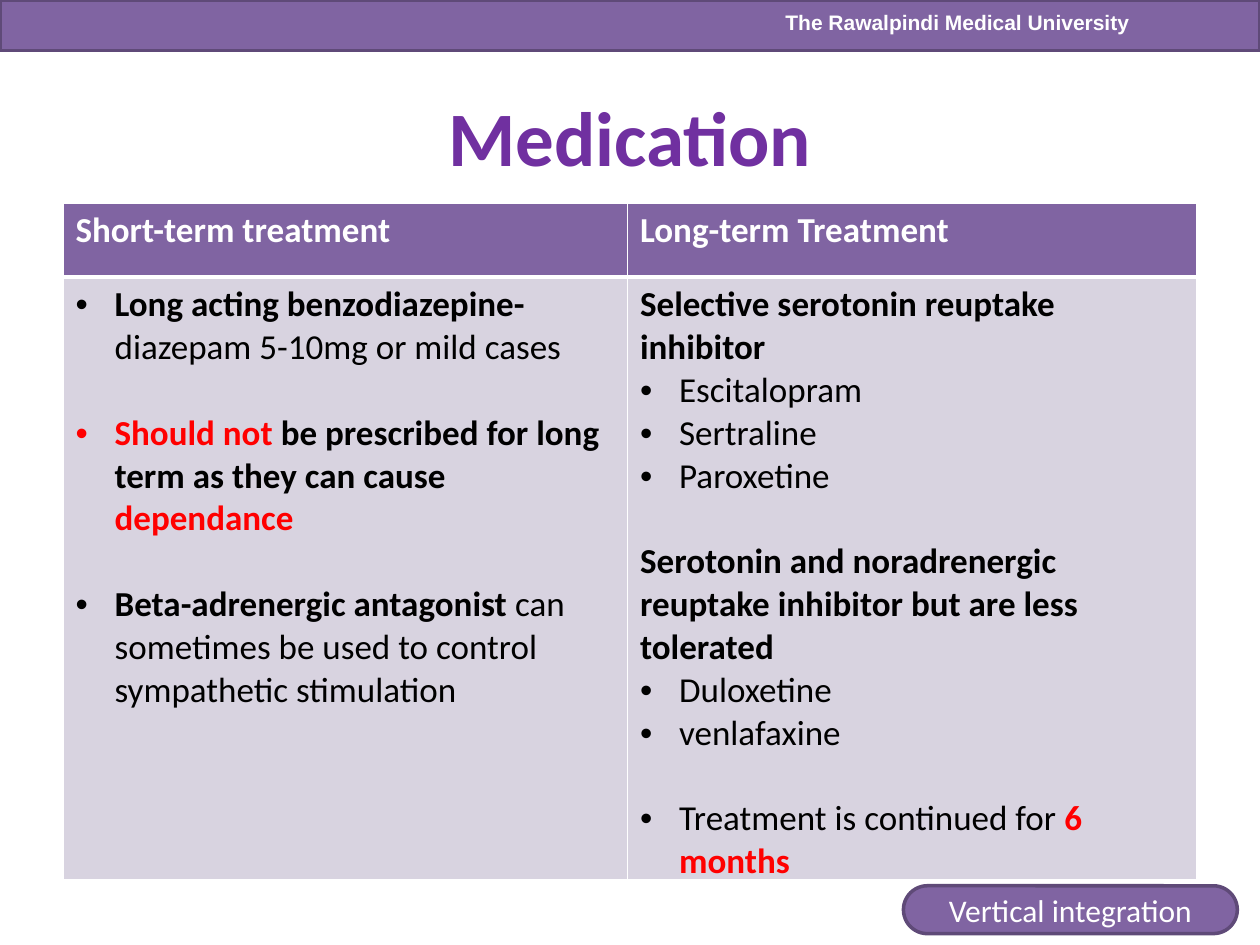
import dataclasses
import typing

import lxml.etree
import pptx
import pptx.dml.color
import pptx.enum.shapes
import pptx.enum.text
import pptx.oxml.ns
import pptx.util

Inches = pptx.util.Inches
Pt = pptx.util.Pt
RGBColor = pptx.dml.color.RGBColor
Align = pptx.enum.text.PP_ALIGN
Anchor = pptx.enum.text.MSO_ANCHOR
Shape = pptx.enum.shapes.MSO_SHAPE
qn = pptx.oxml.ns.qn

PURPLE = RGBColor(0x80, 0x64, 0xA2)
DARK_PURPLE = RGBColor(0x5F, 0x4A, 0x78)
TITLE_PURPLE = RGBColor(0x70, 0x30, 0xA0)
LILAC = RGBColor(0xD8, 0xD3, 0xE0)
WHITE = RGBColor(0xFF, 0xFF, 0xFF)
BLACK = RGBColor(0, 0, 0)
RED = RGBColor(0xFF, 0, 0)
BLANK_LINE = 24.4


@dataclasses.dataclass(frozen=True)
class Span:
    text: str
    bold: bool = False
    color: RGBColor = BLACK
    size: float = 20
    font: str = "Calibri"


@dataclasses.dataclass(frozen=True)
class Para:
    spans: tuple[Span, ...]
    bullet: bool = False
    gap: float = 0
    align: typing.Optional[Align] = None


def heading(text: str, gap: float = 0) -> Para:
    return Para((Span(text, True),), gap=gap)


def item(*spans: Span, gap: float = 0) -> Para:
    return Para(spans, True, gap)


def centred(span: Span) -> tuple[Para, ...]:
    return (Para((span,), align=Align.CENTER),)


HEADERS = ("Short-term treatment", "Long-term Treatment")
SHORT_TERM = (
    item(Span("Long acting benzodiazepine- ", True), Span("diazepam 5-10mg or mild cases")),
    item(
        Span("Should not ", True, RED),
        Span("be prescribed for long term as they can cause ", True),
        Span("dependance", True, RED),
        gap=BLANK_LINE,
    ),
    item(
        Span("Beta-adrenergic antagonist ", True),
        Span("can sometimes be used to control sympathetic stimulation"),
        gap=BLANK_LINE,
    ),
)
LONG_TERM = (
    heading("Selective serotonin reuptake inhibitor"),
    *(item(Span(drug)) for drug in ("Escitalopram", "Sertraline", "Paroxetine")),
    heading("Serotonin and noradrenergic reuptake inhibitor but are less tolerated", BLANK_LINE),
    *(item(Span(drug)) for drug in ("Duloxetine", "venlafaxine")),
    item(Span("Treatment is continued for "), Span("6 months", True, RED), gap=BLANK_LINE),
)


def add_bullet(paragraph) -> None:
    properties = paragraph._p.get_or_add_pPr()
    properties.set("marL", str(Inches(0.31)))
    properties.set("indent", str(-Inches(0.31)))
    lxml.etree.SubElement(properties, qn("a:buFont"), typeface="Arial")
    lxml.etree.SubElement(properties, qn("a:buChar"), char="•")


def write(frame, paras: tuple[Para, ...]) -> None:
    for index, para in enumerate(paras):
        paragraph = frame.add_paragraph() if index else frame.paragraphs[0]
        if para.bullet:
            add_bullet(paragraph)
        if para.gap:
            paragraph.space_before = Pt(para.gap)
        paragraph.alignment = para.align
        for span in para.spans:
            run = paragraph.add_run()
            run.text = span.text
            formats = {"name": span.font, "size": Pt(span.size), "bold": span.bold}
            for name, value in formats.items():
                setattr(run.font, name, value)
            run.font.color.rgb = span.color


def place(shape, left: float, top: float, width: float, height: float) -> None:
    lengths = {"left": left, "top": top, "width": width, "height": height}
    for name, value in lengths.items():
        setattr(shape, name, Inches(value))


def add_panel(page, kind: Shape, *box: float):
    panel = page.shapes.add_shape(kind, *map(Inches, box))
    panel.shadow.inherit = False
    panel.fill.solid()
    panel.fill.fore_color.rgb = PURPLE
    panel.line.color.rgb = DARK_PURPLE
    panel.line.width = Pt(2)
    return panel


def fill_cell(cell, paras: tuple[Para, ...], color: RGBColor, widths: dict[str, float]) -> None:
    properties = cell._tc.get_or_add_tcPr()
    for side, width in widths.items():
        line = lxml.etree.SubElement(properties, qn(f"a:ln{side}"), w=str(Pt(width)))
        solid = lxml.etree.SubElement(line, qn("a:solidFill"))
        lxml.etree.SubElement(solid, qn("a:srgbClr"), val=str(WHITE))
    cell.fill.solid()
    cell.fill.fore_color.rgb = color
    write(cell.text_frame, paras)


def add_treatments(page) -> None:
    box = map(Inches, (0.5, 1.61, 9, 5.18))
    table = page.shapes.add_table(2, 2, *box).table
    for column, width in zip(table.columns, (4.48, 4.52)):
        column.width = Inches(width)
    for row, height in zip(table.rows, (0.59, 4.59)):
        row.height = Inches(height)
    for index, (header, body) in enumerate(zip(HEADERS, (SHORT_TERM, LONG_TERM))):
        title = (Para((Span(header, True, WHITE),)),)
        fill_cell(table.cell(0, index), title, PURPLE, {"L": 1, "R": 1, "T": 1, "B": 3})
        fill_cell(table.cell(1, index), body, LILAC, {"L": 1, "R": 1, "T": 3, "B": 1})


def main() -> None:
    deck = pptx.Presentation()
    deck.slide_width, deck.slide_height = Inches(10), Inches(7.5)
    page = deck.slides.add_slide(deck.slide_layouts[5])

    add_panel(page, Shape.RECTANGLE, 0, 0, 10, 0.4)
    university = page.shapes.add_textbox(*map(Inches, (6.12, 0.03, 2.96, 0.3)))
    university.text_frame.word_wrap = False
    name = Span("The Rawalpindi Medical University", True, WHITE, 12, "Arial")
    write(university.text_frame, centred(name))

    title = page.shapes.title
    place(title, 0.5, 0.6, 9, 0.95)
    title.text_frame.vertical_anchor = Anchor.MIDDLE
    write(title.text_frame, centred(Span("Medication", True, TITLE_PURPLE, 44)))

    add_treatments(page)

    badge = add_panel(page, Shape.ROUNDED_RECTANGLE, 7.17, 7.03, 2.65, 0.38)
    badge.adjustments[0] = 0.5
    badge.text_frame.vertical_anchor = Anchor.MIDDLE
    write(badge.text_frame, centred(Span("Vertical integration", False, WHITE, 18)))

    deck.save("out.pptx")


if __name__ == "__main__":
    main()
